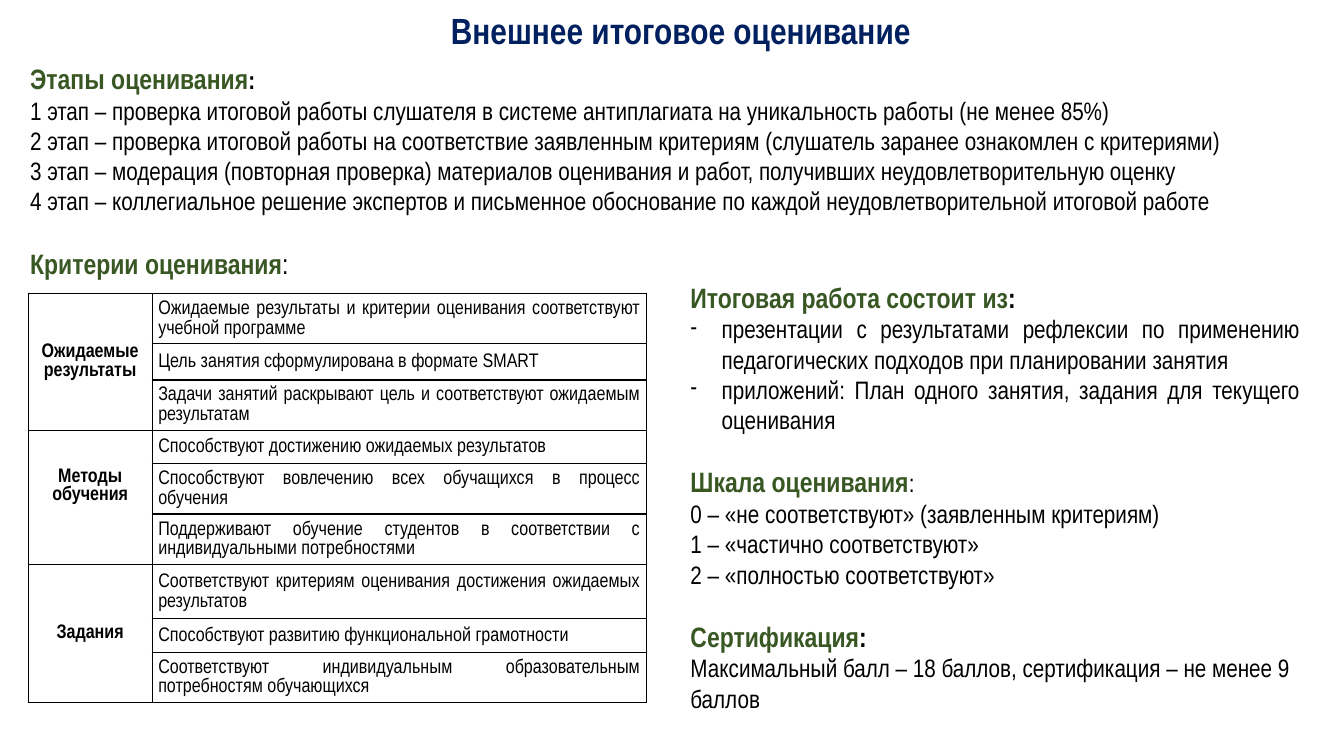
from pptx import Presentation
from pptx.dml.color import RGBColor
from pptx.enum.text import MSO_ANCHOR, PP_ALIGN
from pptx.util import Inches, Pt
from lxml.etree import SubElement
from pptx.oxml.ns import qn

FONT = "Arial Narrow"
COLORS = {"title": "002060", "head": "385723", "text": "000000"}
GAP = 21.5  # points before a new section

TITLE = "Внешнее итоговое оценивание"

# Sections: heading, colon size, colon bold, lines, kind of lines
STAGES = [
    ("Этапы оценивания", 18, True, [
        "1 этап – проверка итоговой работы слушателя в системе антиплагиата на уникальность работы (не менее 85%)",
        "2 этап – проверка итоговой работы на соответствие заявленным критериям (слушатель заранее ознакомлен с критериями)",
        "3 этап – модерация (повторная проверка) материалов оценивания и работ, получивших неудовлетворительную оценку",
        "4 этап – коллегиальное решение экспертов и письменное обоснование по каждой неудовлетворительной итоговой работе",
    ], "just"),
    ("Критерии оценивания", 20, False, [], "just"),
]
DETAILS = [
    ("Итоговая работа состоит из", 20, True, [
        "презентации с результатами рефлексии по применению педагогических подходов при планировании занятия",
        "приложений: План одного занятия, задания для текущего оценивания",
    ], "dash"),
    ("Шкала оценивания", 18, False, [
        "0 – «не соответствуют» (заявленным критериям)",
        "1 – «частично соответствуют»",
        "2 – «полностью соответствуют»",
    ], "left"),
    ("Сертификация", 20, True, [
        "Максимальный балл – 18 баллов, сертификация – не менее 9 баллов",
    ], "left"),
]

# Criteria: group, bottom margin, (row height, criterion)
CRITERIA = [
    ("Ожидаемые результаты", 0, [
        (0.5, "Ожидаемые результаты и критерии оценивания соответствуют учебной программе"),
        (0.36, "Цель занятия сформулирована в формате SMART"),
        (0.5, "Задачи занятий раскрывают цель и соответствуют ожидаемым результатам"),
    ]),
    ("Методы обучения", 0.22, [
        (0.33, "Способствуют достижению ожидаемых результатов"),
        (0.5, "Способствуют вовлечению всех обучащихся в процесс обучения"),
        (0.5, "Поддерживают обучение студентов в соответствии с индивидуальными потребностями"),
    ]),
    ("Задания", 0, [
        (0.54, "Соответствуют критериям оценивания достижения ожидаемых результатов"),
        (0.33, "Способствуют развитию функциональной грамотности"),
        (0.5, "Соответствуют индивидуальным образовательным потребностям обучающихся"),
    ]),
]
COLS = (1.23, 4.9)


def style(run, size, color="text", bold=False):
    run.font.name = FONT
    run.font.size = Pt(size)
    run.font.bold = bold
    run.font.color.rgb = RGBColor.from_string(COLORS[color])


def add_run(para, text, size, color="text", bold=False):
    run = para.add_run()
    run.text = text
    style(run, size, color, bold)


def add_box(slide, left, top, width, height):
    box = slide.shapes.add_textbox(*map(Inches, (left, top, width, height)))
    box.text_frame.word_wrap = True
    return box.text_frame


def add_dash(para):
    props = para._p.get_or_add_pPr()
    props.set("marL", str(Inches(0.31)))
    props.set("indent", str(-Inches(0.31)))
    SubElement(props, qn("a:buFont"), typeface=FONT)
    SubElement(props, qn("a:buChar"), char="-")


def fill_box(frame, sections):
    for num, (head, size, bold, lines, kind) in enumerate(sections):
        align = PP_ALIGN.LEFT if kind == "left" else PP_ALIGN.JUSTIFY
        para = frame.add_paragraph() if num else frame.paragraphs[0]
        para.alignment = align
        para.space_before = Pt(GAP if num else 0)
        add_run(para, head, 20, "head", True)
        add_run(para, ":", size, "text", bold)
        for line in lines:
            para = frame.add_paragraph()
            para.alignment = align
            if kind == "dash":
                add_dash(para)
            add_run(para, line, 18)


def add_border(cell):
    props = cell._tc.get_or_add_tcPr()
    for side in ("lnL", "lnR", "lnT", "lnB"):
        line = SubElement(props, qn(f"a:{side}"), w=str(Pt(1)))
        fill = SubElement(line, qn("a:solidFill"))
        SubElement(fill, qn("a:srgbClr"), val=COLORS["text"])


def fill_cell(cell, text, align, bold=False, bottom=0):
    cell.vertical_anchor = MSO_ANCHOR.MIDDLE
    cell.margin_left = cell.margin_right = Inches(0.06)
    cell.margin_top, cell.margin_bottom = 0, Inches(bottom)
    cell.text_frame.text = text
    para = cell.text_frame.paragraphs[0]
    para.alignment = align
    if not bold:
        para.line_spacing = 1.07
        para.space_after = Pt(8)
    style(para.runs[0], 14, "text", bold)


def add_criteria(slide):
    heights = [high for _, _, rows in CRITERIA for high, _ in rows]
    table = slide.shapes.add_table(
        len(heights), len(COLS), Inches(0.28), Inches(2.91),
        Inches(sum(COLS)), Inches(sum(heights))).table
    table.first_row = table.horz_banding = False
    for col, width in zip(table.columns, COLS):
        col.width = Inches(width)
    for row, high in zip(table.rows, heights):
        row.height = Inches(high)
    for cell in table.iter_cells():
        add_border(cell)
        cell.fill.background()
    top = 0
    for group, bottom, rows in CRITERIA:
        table.cell(top, 0).merge(table.cell(top + len(rows) - 1, 0))
        fill_cell(table.cell(top, 0), group, PP_ALIGN.CENTER, True, bottom)
        for num, (_, text) in enumerate(rows, top):
            fill_cell(table.cell(num, 1), text, PP_ALIGN.JUSTIFY)
        top += len(rows)


def main():
    deck = Presentation()
    deck.slide_width, deck.slide_height = Inches(13.33), Inches(7.5)
    slide = deck.slides.add_slide(deck.slide_layouts[6])

    # Title
    para = add_box(slide, 0.17, 0.03, 13.17, 0.54).paragraphs[0]
    para.alignment = PP_ALIGN.CENTER
    add_run(para, TITLE, 26, "title", True)

    # Stages above, criteria on the left, details on the right
    fill_box(add_box(slide, 0.2, 0.56, 12.5, 2.29), STAGES)
    add_criteria(slide)
    fill_box(add_box(slide, 6.75, 2.73, 6.24, 4.44), DETAILS)

    deck.save("out.pptx")


if __name__ == "__main__":
    main()
